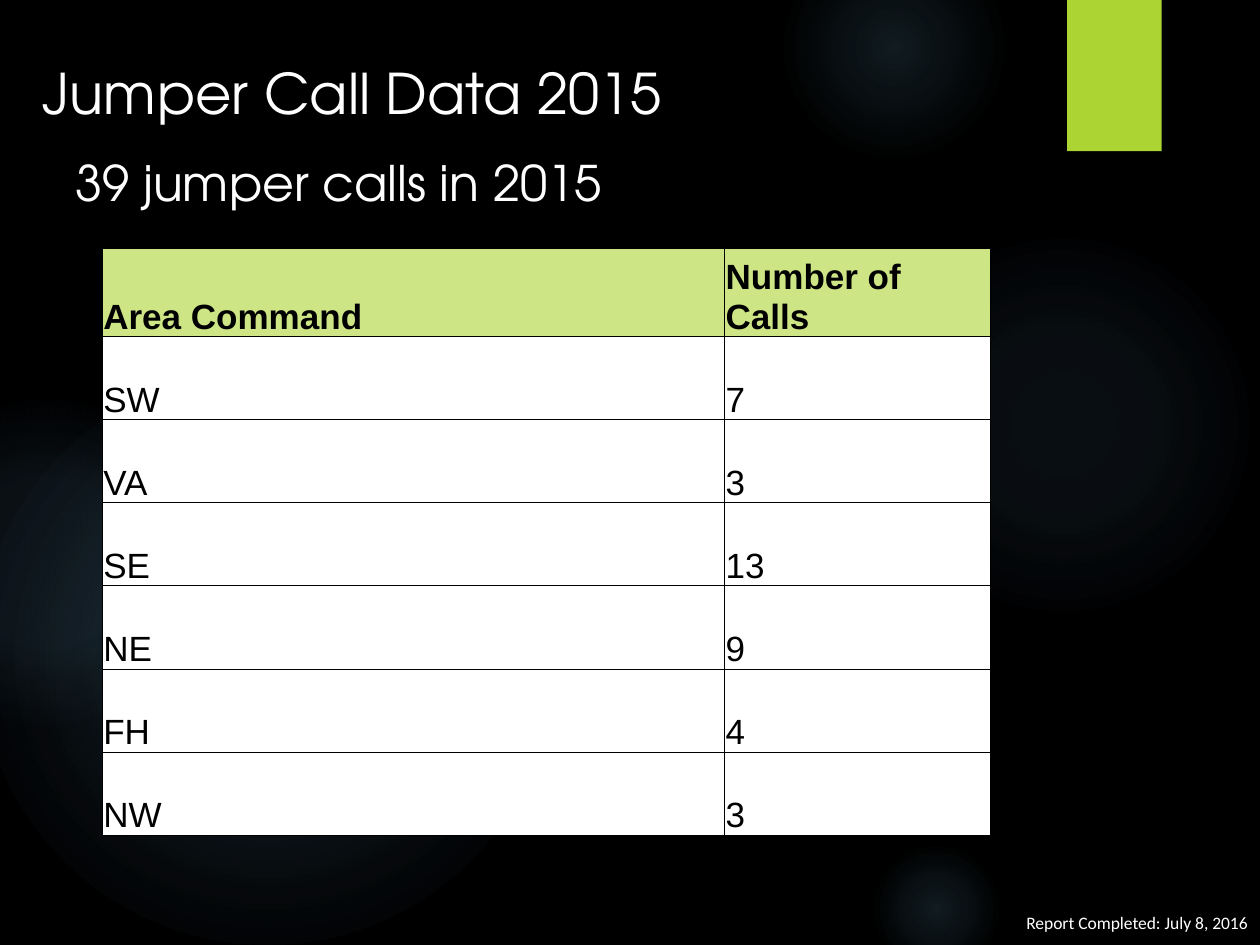
from lxml import etree
from pptx import Presentation
from pptx.dml.color import RGBColor
from pptx.enum.shapes import MSO_SHAPE
from pptx.enum.text import MSO_ANCHOR, PP_ALIGN
from pptx.oxml import parse_xml
from pptx.oxml.ns import nsdecls, qn
from pptx.util import Inches, Pt

OVAL, RECTANGLE = MSO_SHAPE.OVAL, MSO_SHAPE.RECTANGLE
MIDDLE, BOTTOM = MSO_ANCHOR.MIDDLE, MSO_ANCHOR.BOTTOM
LEFT, RIGHT = PP_ALIGN.LEFT, PP_ALIGN.RIGHT

WIDTH, HEIGHT = Inches(10), Inches(7.5)
TITLE_ONLY_LAYOUT = 5
HEADING_FONT, TABLE_FONT, NOTE_FONT = "TeX Gyre Adventor", "Arial", "Calibri"
COLORS = {
    "background": "000000",
    "glow": "7AC4F0",
    "accent": "ACD433",
    "header": "CDE585",
    "light": "FFFFFF",
    "dark": "000000",
}

# left, top, diameter in percent, then (position, opacity) stops
GLOWS = [
    (68.9, 24.4, 30.8, [(0, 7), (36, 6), (69, 0)]),
    (62.2, -6.67, 17.5, [(0, 14), (36, 7), (73, 0)]),
    (68.9, 88.93, 10.8, [(0, 14), (36, 7), (66, 0)]),
    (-1.7, 38.93, 45.8, [(0, 11), (36, 10), (75, 0)]),
    (-9.2, 42.27, 25.8, [(0, 8), (36, 8), (72, 0)]),
]
CALLS = [
    ("Area Command", "Number of Calls"),
    ("SW", "7"),
    ("VA", "3"),
    ("SE", "13"),
    ("NE", "9"),
    ("FH", "4"),
    ("NW", "3"),
]
COLUMN_WIDTHS = [49.4, 21.1]
HEADER_HEIGHT, ROW_HEIGHT = 9.33, 8.8


def color(name):
    return RGBColor.from_string(COLORS[name])


def across(percent):
    return round(WIDTH * percent / 100)


def down(percent):
    return round(HEIGHT * percent / 100)


def box(left, top, width, height):
    return across(left), down(top), across(width), down(height)


def write(text_frame, text, size, font, color_name, align=LEFT, bold=False):
    text_frame.text = text
    paragraph = text_frame.paragraphs[0]
    paragraph.alignment = align
    for run in paragraph.runs:
        run.font.size = Pt(size)
        run.font.name = font
        run.font.bold = bold
        run.font.color.rgb = color(color_name)


def add_glow(slide, left, top, diameter, stops):
    size = across(diameter)
    shape = slide.shapes.add_shape(OVAL, across(left), down(top), size, size)
    shape.shadow.inherit = False
    shape.line.fill.background()
    shape.fill.background()
    stop_xml = "".join(
        f'<a:gs pos="{position * 1000}"><a:srgbClr val="{COLORS["glow"]}">'
        f'<a:alpha val="{opacity * 1000}"/></a:srgbClr></a:gs>'
        for position, opacity in stops
    )
    gradient = parse_xml(
        f'<a:gradFill {nsdecls("a")} rotWithShape="1"><a:gsLst>{stop_xml}</a:gsLst>'
        '<a:path path="circle"><a:fillToRect l="50000" t="50000" r="50000" b="50000"/>'
        "</a:path></a:gradFill>"
    )
    properties = shape.element.spPr
    properties.replace(properties.find(qn("a:noFill")), gradient)


def add_accent(slide):
    shape = slide.shapes.add_shape(RECTANGLE, *box(84.7, 0, 7.5, 16))
    shape.shadow.inherit = False
    shape.line.fill.background()
    shape.fill.solid()
    shape.fill.fore_color.rgb = color("accent")


def set_title(slide, text):
    title = slide.shapes.title
    title.left, title.top, title.width, title.height = box(2.4, 5.33, 81.2, 8.8)
    title.text_frame.vertical_anchor = MIDDLE
    write(title.text_frame, text, 32, HEADING_FONT, "light")


def add_text(slide, position, text, size, font, align=LEFT):
    text_frame = slide.shapes.add_textbox(*position).text_frame
    text_frame.word_wrap = True
    write(text_frame, text, size, font, "light", align)


def set_borders(cell):
    properties = cell._tc.get_or_add_tcPr()
    for index, side in enumerate(("lnL", "lnR", "lnT", "lnB")):
        line = etree.Element(qn(f"a:{side}"), w=str(Pt(0.5)))
        fill = etree.SubElement(line, qn("a:solidFill"))
        etree.SubElement(fill, qn("a:srgbClr"), val=COLORS["dark"])
        properties.insert(index, line)


def fill_cell(cell, text, is_header):
    write(cell.text_frame, text, 20, TABLE_FONT, "dark", bold=is_header)
    cell.vertical_anchor = BOTTOM
    cell.margin_left = cell.margin_right = cell.margin_top = Inches(0.01)
    cell.margin_bottom = 0
    cell.fill.solid()
    cell.fill.fore_color.rgb = color("header" if is_header else "light")
    set_borders(cell)


def add_calls_table(slide):
    heights = [HEADER_HEIGHT] + [ROW_HEIGHT] * (len(CALLS) - 1)
    position = box(8.1, 26.27, sum(COLUMN_WIDTHS), sum(heights))
    table = slide.shapes.add_table(len(CALLS), len(COLUMN_WIDTHS), *position).table
    table.first_row = table.horz_banding = False
    for column, width in zip(table.columns, COLUMN_WIDTHS):
        column.width = across(width)
    for row_index, (values, height) in enumerate(zip(CALLS, heights)):
        table.rows[row_index].height = down(height)
        for column_index, value in enumerate(values):
            fill_cell(table.cell(row_index, column_index), value, row_index == 0)


def main():
    presentation = Presentation()
    presentation.slide_width, presentation.slide_height = WIDTH, HEIGHT
    slide = presentation.slides.add_slide(presentation.slide_layouts[TITLE_ONLY_LAYOUT])
    slide.background.fill.solid()
    slide.background.fill.fore_color.rgb = color("background")
    for glow in GLOWS:
        add_glow(slide, *glow)
    add_accent(slide)
    set_title(slide, "Jumper Call Data 2015")
    add_text(slide, box(71.7, 95.87, 28.3, 3.6), "Report Completed: July 8, 2016",
             10, NOTE_FONT, RIGHT)
    add_text(slide, box(5, 15.47, 70, 7.6), "39 jumper calls in 2015", 28, HEADING_FONT)
    add_calls_table(slide)
    presentation.save("out.pptx")


if __name__ == "__main__":
    main()
